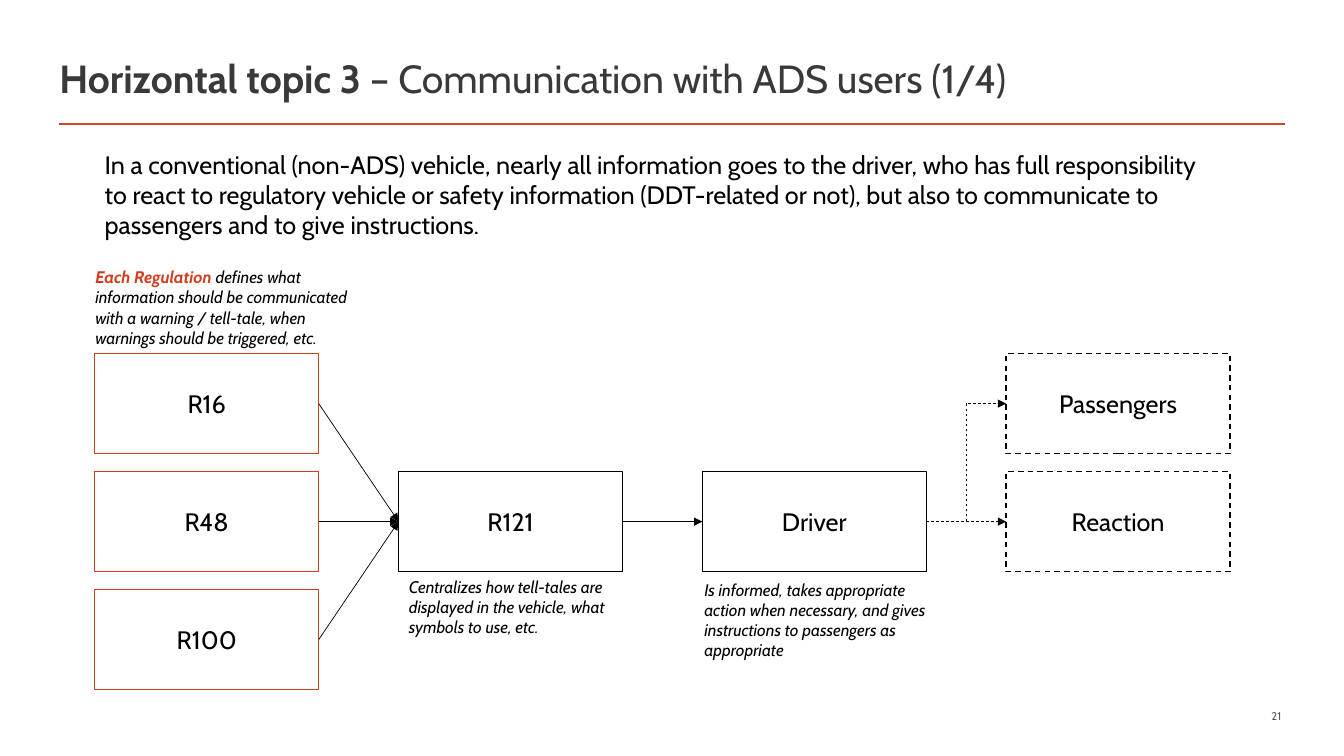
from lxml import etree
from pptx import Presentation
from pptx.dml.color import RGBColor
from pptx.enum import dml, shapes, text
from pptx.oxml.ns import qn
from pptx.util import Pt

FONT = "Cabin"
RED, BLACK = "CF3D1C", "000000"


def color(code):
    return RGBColor.from_string(code)


def write(shape, runs, size, code=BLACK, italic=None, align=text.PP_ALIGN.LEFT,
          anchor=text.MSO_ANCHOR.TOP):
    """Fill a shape with one paragraph of (words, bold, colour) runs."""
    frame = shape.text_frame
    frame.word_wrap = True
    frame.auto_size = text.MSO_AUTO_SIZE.NONE
    frame.vertical_anchor = anchor
    para = frame.paragraphs[0]
    para.alignment = align
    para.font.name = FONT
    para.font.size = Pt(size)
    para.font.italic = italic
    para.font.color.rgb = color(code)
    for words, bold, tint in runs:
        run = para.add_run()
        run.text = words
        run.font.bold = bold
        if tint:
            run.font.color.rgb = color(tint)


prs = Presentation()
prs.slide_width, prs.slide_height = Pt(960), Pt(540)
slide = prs.slides.add_slide(prs.slide_layouts[5])
items = slide.shapes

# Title and rule
title = items.title
title.left, title.top, title.width, title.height = Pt(35.3), Pt(33.8), Pt(882.7), Pt(44)
write(title, [("Horizontal topic 3", True, None),
              (" – Communication with ADS users (1/4)", False, None)],
      28, "3B3838", anchor=text.MSO_ANCHOR.MIDDLE)
rule = items.add_connector(shapes.MSO_CONNECTOR.STRAIGHT, Pt(42.5), Pt(88.6), Pt(918), Pt(88.6))
rule.line.color.rgb = color("D24726")
rule.line.width = Pt(2)
etree.SubElement(rule._element.spPr, qn("a:effectLst"))

# Introduction and captions
notes = [
    (67.7, 103, 810.7, 73, 18, None,
     [("In a conventional (non-ADS) vehicle, nearly all information goes to the driver, "
       "who has full responsibility to react to regulatory vehicle or safety information "
       "(DDT-related or not), but also to communicate to passengers and to give "
       "instructions.", None, None)]),
    (61, 187.2, 210, 65.5, 12, True,
     [("Each Regulation ", True, RED),
      ("defines what information should be communicated with a warning / tell-tale, "
       "when warnings should be triggered, etc.", None, None)]),
    (285, 408.2, 160, 51, 12, True,
     [("Centralizes how tell-tales are displayed in the vehicle, what symbols to use, "
       "etc.", None, None)]),
    (496, 410.4, 175, 65.5, 12, True,
     [("Is informed, takes appropriate action when necessary, and gives instructions "
       "to passengers as appropriate", None, None)]),
]
for left, top, width, height, size, italic, runs in notes:
    note = items.add_textbox(Pt(left), Pt(top), Pt(width), Pt(height))
    write(note, runs, size, italic=italic)

# Boxes on a grid of four columns and three rows
boxes = {}
for name, col, row, edge, dashed in [
    ("R16", 0, 0, RED, False),
    ("R48", 0, 1, RED, False),
    ("R100", 0, 2, RED, False),
    ("R121", 1, 1, BLACK, False),
    ("Driver", 2, 1, BLACK, False),
    ("Passengers", 3, 0, BLACK, True),
    ("Reaction", 3, 1, BLACK, True),
]:
    box = items.add_shape(shapes.MSO_SHAPE.RECTANGLE, Pt(67.7 + 217 * col),
                          Pt(252.7 + 84.25 * row), Pt(160), Pt(71.3))
    box.shadow.inherit = False
    box.fill.background()
    box.line.color.rgb = color(edge)
    box.line.width = Pt(1)
    if dashed:
        box.line.dash_style = dml.MSO_LINE.DASH
    write(box, [(name, None, None)], 18, align=text.PP_ALIGN.CENTER,
          anchor=text.MSO_ANCHOR.MIDDLE)
    boxes[name] = box
boxes["Driver"].fill.solid()
boxes["Driver"].fill.fore_color.rgb = color("FFFFFF")

# Arrows from right side to left side
STRAIGHT, ELBOW = shapes.MSO_CONNECTOR.STRAIGHT, shapes.MSO_CONNECTOR.ELBOW
for start, end, kind, dashed in [
    ("R16", "R121", STRAIGHT, False),
    ("R48", "R121", STRAIGHT, False),
    ("R100", "R121", STRAIGHT, False),
    ("R121", "Driver", STRAIGHT, False),
    ("Driver", "Reaction", STRAIGHT, True),
    ("Driver", "Passengers", ELBOW, True),
]:
    a, b = boxes[start], boxes[end]
    arrow = items.add_connector(kind, a.left + a.width, a.top + a.height // 2,
                                b.left, b.top + b.height // 2)
    arrow.begin_connect(a, 3)
    arrow.end_connect(b, 1)
    arrow.line.color.rgb = color(BLACK)
    arrow.line.width = Pt(0.5)
    if dashed:
        arrow.line.dash_style = dml.MSO_LINE.DASH
    etree.SubElement(arrow.line._get_or_add_ln(), qn("a:tailEnd"), type="triangle")
    etree.SubElement(arrow._element.spPr, qn("a:effectLst"))

# Page number
page = items.add_textbox(Pt(657.4), Pt(506.2), Pt(257.8), Pt(10.8))
write(page, [("21", None, None)], 8, "595959", align=text.PP_ALIGN.RIGHT,
      anchor=text.MSO_ANCHOR.MIDDLE)
page.text_frame.margin_right = page.text_frame.margin_top = page.text_frame.margin_bottom = 0

prs.save("out.pptx")
